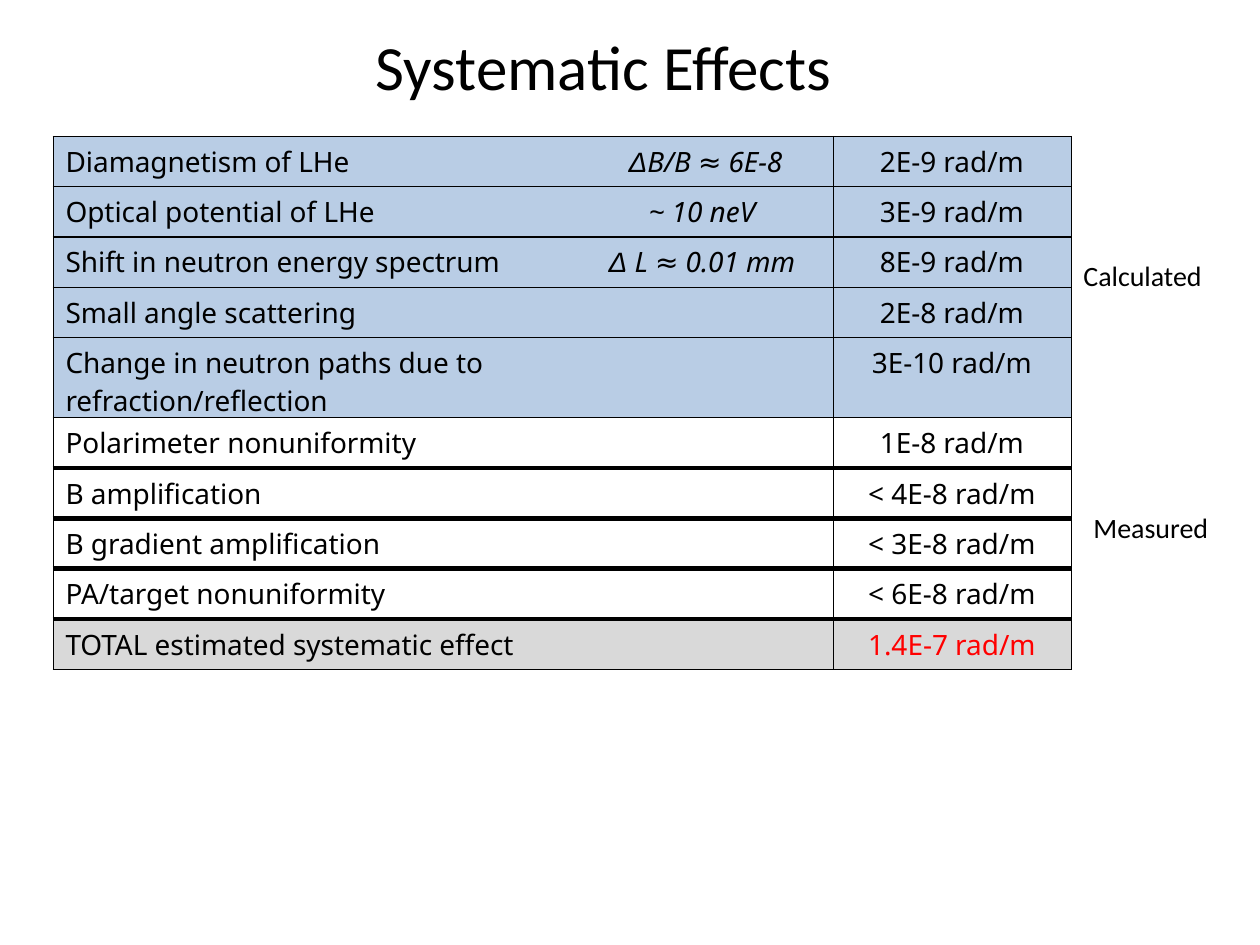
import pptx
import pptx.dml.color
import pptx.enum.text
import pptx.oxml
import pptx.oxml.ns
import pptx.util
from pptx.dml.color import RGBColor
from pptx.util import Inches

BLACK = RGBColor(0, 0, 0)
RED = RGBColor(0xFF, 0, 0)
BLUE = RGBColor(0xB9, 0xCD, 0xE5)
GREY = RGBColor(0xD9, 0xD9, 0xD9)
WHITE = RGBColor(0xFF, 0xFF, 0xFF)
CENTER = pptx.enum.text.PP_ALIGN.CENTER
LEFT = pptx.enum.text.PP_ALIGN.LEFT

CALCULATED = [
    ("Diamagnetism of LHe", "ΔB/B ≈ 6E-8", "2E-9 rad/m"),
    ("Optical potential of LHe", "~ 10 neV ", "3E-9 rad/m"),
    ("Shift in neutron energy spectrum", "Δ L ≈ 0.01 mm ", "8E-9 rad/m"),
    ("Small angle scattering", "", "2E-8 rad/m"),
    ("Change in neutron paths due to refraction/reflection", "", "3E-10 rad/m"),
]
MEASURED = [
    ("Polarimeter nonuniformity", "", "1E-8 rad/m"),
    ("B amplification", "", "< 4E-8 rad/m"),
    ("B gradient amplification", "", "< 3E-8 rad/m"),
    ("PA/target nonuniformity", "", "< 6E-8 rad/m"),
]
TOTAL = [("TOTAL estimated systematic effect", "", "1.4E-7 rad/m")]
COLUMN_WIDTHS = [4.17, 2.02, 1.89]
ROW_HEIGHT, TALL_ROW_HEIGHT = 0.4, 0.63
HAIRLINE, THIN, THICK = 0.25, 1, 3


def add_run(p, text, size, name, color=BLACK, italic=False):
    """Append a formatted run to a paragraph."""
    r = p.add_run()
    r.text = text
    formats = {"size": pptx.util.Pt(size), "name": name, "italic": italic}
    for key, value in formats.items():
        setattr(r.font, key, value)
    r.font.color.rgb = color


def add_label(s, box, text, size, wrap=False, align=LEFT):
    """Add a one-line text box in the given box."""
    tf = s.shapes.add_textbox(*map(Inches, box)).text_frame
    formats = {
        "word_wrap": wrap,
        "vertical_anchor": pptx.enum.text.MSO_ANCHOR.MIDDLE,
    }
    for key, value in formats.items():
        setattr(tf, key, value)
    tf.paragraphs[0].alignment = align
    add_run(tf.paragraphs[0], text, size, "Calibri")


def set_borders(cell, widths):
    """Draw the cell's borders; a width of zero means no line."""
    tc_pr = cell._tc.get_or_add_tcPr()
    for i, (side, width) in enumerate(zip("LRTB", widths)):
        fill = f'<a:solidFill><a:srgbClr val="{BLACK}"/></a:solidFill>' if width else "<a:noFill/>"
        line = pptx.oxml.parse_xml(
            f'<a:ln{side} {pptx.oxml.ns.nsdecls("a")} w="{int(width * 12700)}">{fill}</a:ln{side}>')
        tc_pr.insert(i, line)


def fill_cell(cell, text, color, align, italic):
    """Write a cell's text, with any leading Greek letter in Arial."""
    p = cell.text_frame.paragraphs[0]
    p.alignment = align
    if text.startswith("Δ"):
        add_run(p, "Δ", 16, "Arial", color, italic)
        text = text[1:]
    if text:
        add_run(p, text, 16, "Noto Sans", color, italic)
    else:
        p._p.append(pptx.oxml.parse_xml(
            f'<a:endParaRPr {pptx.oxml.ns.nsdecls("a")} sz="1600"/>'))


def add_effects_table(s, box):
    """Add the table of effects, grouped by how each was obtained."""
    groups = [(CALCULATED, BLUE), (MEASURED, WHITE), (TOTAL, GREY)]
    rows = [(row, fill) for group, fill in groups for row in group]
    rules = [HAIRLINE] + [THIN] * len(CALCULATED) + [THICK] * len(MEASURED) + [HAIRLINE]
    table = s.shapes.add_table(len(rows), len(COLUMN_WIDTHS), *map(Inches, box)).table
    for flag in ("first_row", "horz_banding"):
        setattr(table, flag, False)
    for column, width in zip(table.columns, COLUMN_WIDTHS):
        column.width = Inches(width)
    for i, (texts, fill) in enumerate(rows):
        tall = texts is CALCULATED[-1]
        table.rows[i].height = Inches(TALL_ROW_HEIGHT if tall else ROW_HEIGHT)
        for j, text in enumerate(texts):
            cell = table.cell(i, j)
            cell.fill.solid()
            cell.fill.fore_color.rgb = fill
            left = 0 if j == 1 else HAIRLINE
            right = 0 if j == 0 else HAIRLINE
            set_borders(cell, (left, right, rules[i], rules[i + 1]))
            color = RED if texts is TOTAL[0] and j == 2 else BLACK
            fill_cell(cell, text, color, CENTER if j else LEFT, j == 1)


def main():
    """Build and save the slide."""
    prs = pptx.Presentation()
    prs.slide_width, prs.slide_height = Inches(10), Inches(7.5)
    s = prs.slides.add_slide(prs.slide_layouts[6])
    add_label(s, (0.5, 0, 8.58, 1.03), "Systematic Effects", 36, True, CENTER)
    add_effects_table(s, (0.42, 1.08, 8.08, 4.26))
    add_label(s, (8.5, 2, 1.15, 0.37), "Calculated", 16)
    add_label(s, (8.58, 4, 1.12, 0.37), "Measured", 16)
    prs.save("out.pptx")


if __name__ == "__main__":
    main()
